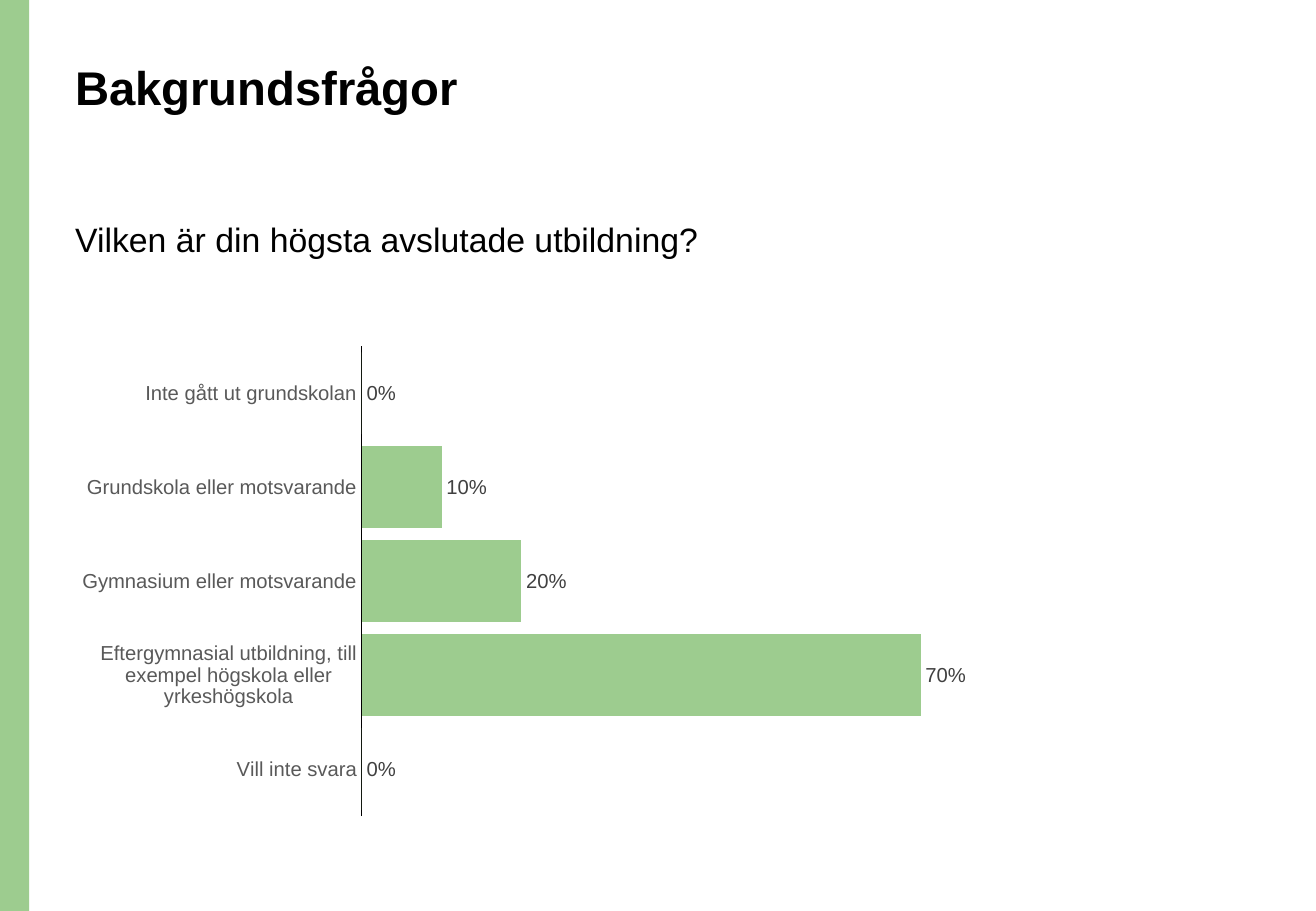
"""Build a survey slide with a bar chart of education levels."""
from pptx import Presentation
from pptx.chart.data import CategoryChartData
from pptx.dml.color import RGBColor
from pptx.enum.chart import XL_CHART_TYPE, XL_LABEL_POSITION, XL_TICK_MARK
from pptx.enum.shapes import MSO_SHAPE
from pptx.enum.text import MSO_ANCHOR
from pptx.util import Inches, Pt

BAR_CLUSTERED = XL_CHART_TYPE.BAR_CLUSTERED
OUTSIDE_END = XL_LABEL_POSITION.OUTSIDE_END
NO_TICK = XL_TICK_MARK.NONE
RECTANGLE = MSO_SHAPE.RECTANGLE
TOP = MSO_ANCHOR.TOP

GREEN = RGBColor(0x9D, 0xCC, 0x8F)
BLACK = RGBColor(0x00, 0x00, 0x00)
AXIS_GRAY = RGBColor(0x59, 0x59, 0x59)
LABEL_GRAY = RGBColor(0x40, 0x40, 0x40)

EDUCATION_SHARES = {
    "Inte gått ut grundskolan": 0,
    "Grundskola eller motsvarande": 0.1,
    "Gymnasium eller motsvarande": 0.2,
    "Eftergymnasial utbildning, till exempel högskola eller yrkeshögskola": 0.7,
    "Vill inte svara": 0,
}


class SurveyPage:
    """Holds the text style and the current slide."""

    font_name = "Arial"

    def __init__(self, page):
        self.shapes = page.shapes

    def style(self, font, size, color, bold=False):
        font.name = self.font_name
        font.size = Pt(size)
        font.color.rgb = color
        font.bold = bold

    def band(self, left, top, width, height):
        band = self.shapes.add_shape(
            RECTANGLE, Inches(left), Inches(top), Inches(width), Inches(height))
        band.shadow.inherit = False
        band.fill.solid()
        band.fill.fore_color.rgb = GREEN
        band.line.fill.background()

    def text(self, left, top, width, height, wording, size, bold=False):
        box = self.shapes.add_textbox(
            Inches(left), Inches(top), Inches(width), Inches(height))
        frame = box.text_frame
        frame.word_wrap = True
        frame.vertical_anchor = TOP
        para = frame.paragraphs[0]
        para.line_spacing = 0.9
        span = para.add_run()
        span.text = wording
        self.style(span.font, size, BLACK, bold)

    def bar_chart(self, left, top, width, height, shares):
        data = CategoryChartData(number_format="0%")
        data.categories = list(shares)
        data.add_series("Series 1", list(shares.values()))
        chart = self.shapes.add_chart(
            BAR_CLUSTERED, Inches(left), Inches(top), Inches(width),
            Inches(height), data).chart
        chart.has_legend = False
        chart.has_title = False
        self.style(chart.font, 10, BLACK)

        category_axis = chart.category_axis
        category_axis.reverse_order = True
        category_axis.has_major_gridlines = False
        category_axis.major_tick_mark = NO_TICK
        category_axis.minor_tick_mark = NO_TICK
        category_axis.format.line.color.rgb = BLACK
        category_axis.format.line.width = Pt(0.75)
        self.style(category_axis.tick_labels.font, 12, AXIS_GRAY)

        value_axis = chart.value_axis
        value_axis.visible = False
        value_axis.has_major_gridlines = False
        value_axis.minimum_scale = 0
        value_axis.maximum_scale = 0.8

        plot = chart.plots[0]
        plot.gap_width = 15
        plot.vary_by_categories = False
        series = plot.series[0]
        series.format.fill.solid()
        series.format.fill.fore_color.rgb = GREEN
        labels = series.data_labels
        labels.show_value = True
        labels.number_format = "0%"
        labels.number_format_is_linked = False
        labels.position = OUTSIDE_END
        self.style(labels.font, 12, LABEL_GRAY)


def main():
    deck = Presentation()
    deck.slide_width = Inches(10.83)
    deck.slide_height = Inches(7.5)
    page = SurveyPage(deck.slides.add_slide(deck.slide_layouts[6]))
    page.band(0, 0, 0.24, 7.5)
    page.text(0.52, 1.79, 6.03, 0.74,
              "Vilken är din högsta avslutade utbildning?", 20)
    page.text(0.52, 0.48, 9.34, 1.02, "Bakgrundsfrågor", 28, bold=True)
    page.bar_chart(0.52, 2.77, 7.87, 4.03, EDUCATION_SHARES)
    deck.save("out.pptx")


if __name__ == "__main__":
    main()
